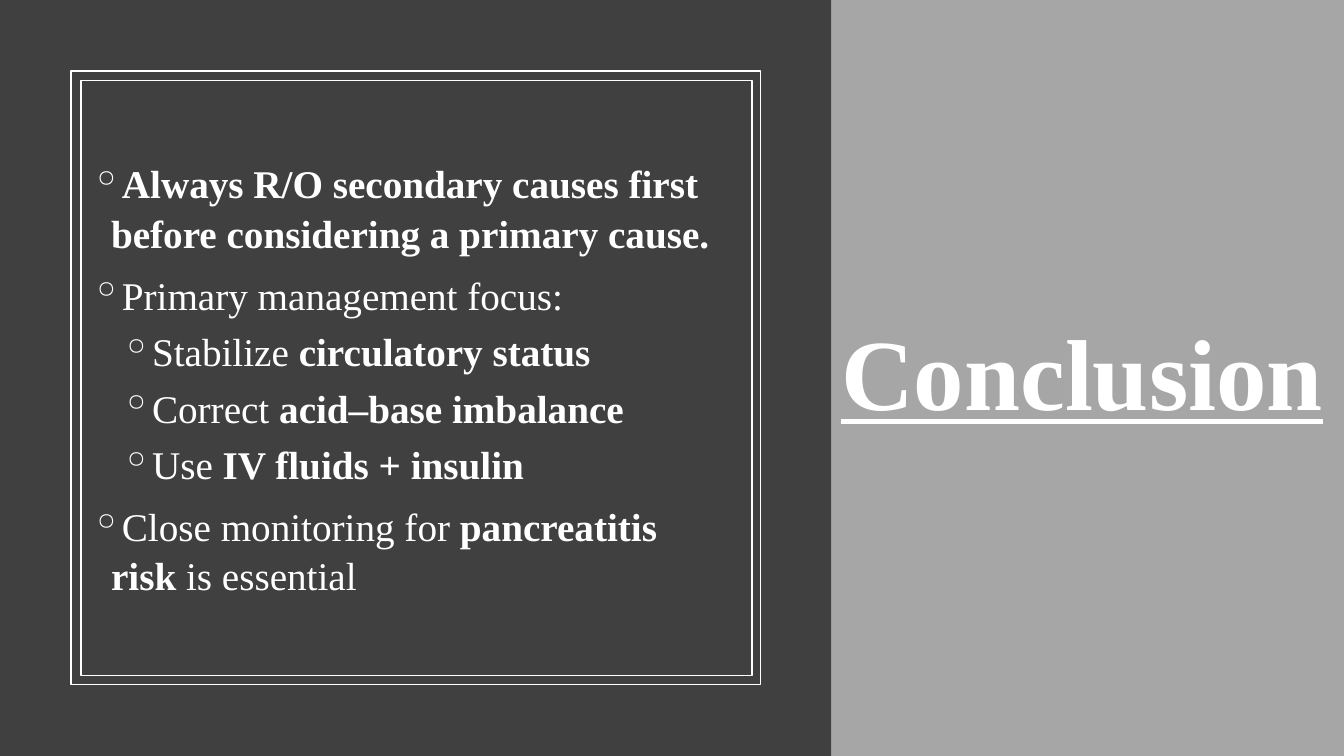
from lxml import etree
from pptx import Presentation
from pptx.dml.color import RGBColor
from pptx.enum import shapes, text
from pptx.oxml import ns
from pptx.util import Cm, Pt

# Content: (level, [(words, bold), ...])
TITLE = "Conclusion"
POINTS = [
    (0, [("Always R/O secondary causes first before considering a primary cause.", True)]),
    (0, [("Primary management focus:", False)]),
    (1, [("Stabilize ", False), ("circulatory status", True)]),
    (1, [("Correct ", False), ("acid–base imbalance", True)]),
    (1, [("Use ", False), ("IV fluids + insulin", True)]),
    (0, [("Close monitoring for ", False), ("pancreatitis risk", True), (" is essential", False)]),
]

# Style
FONT = "Times New Roman"
WHITE, GREY, CHARCOAL, BLACK = "FFFFFF", "A6A6A6", "404040", "000000"
LEFT_MARGIN = [0.51, 1.27]  # cm, by level
SPACE_BEFORE = [9, 5]  # points, by level
HANGING = 0.51

# Layout in cm: left, top, width, height
WIDTH, HEIGHT = 33.87, 19.05
PANEL_WIDTH = 20.95
OUTER_FRAME = (1.79, 1.79, 17.37, 15.46)
INNER_FRAME = (2.04, 2.03, 16.91, 15)
TITLE_BOX = (PANEL_WIDTH, 3.25, 13.39, 12.55)
BODY_BOX = (2.04, 2.69, 16.13, 13.67)


def colour(hex_text):
    return RGBColor.from_string(hex_text)


def add_rectangle(page, place, fill=None, line=None):
    box = page.shapes.add_shape(shapes.MSO_SHAPE.RECTANGLE, *map(Cm, place))
    box.shadow.inherit = False
    if fill:
        box.fill.solid()
        box.fill.fore_color.rgb = colour(fill)
    else:
        box.fill.background()
    if line:
        box.line.color.rgb = colour(line)
        box.line.width = Pt(1)
    else:
        box.line.fill.background()


def add_text(page, place):
    frame = page.shapes.add_textbox(*map(Cm, place)).text_frame
    frame.word_wrap = True
    frame.vertical_anchor = text.MSO_ANCHOR.MIDDLE
    return frame


def style_font(font, size, bold):
    font.name, font.size, font.bold = FONT, Pt(size), bold
    font.color.rgb = colour(WHITE)


def add_bullet(para, level):
    properties = para._p.get_or_add_pPr()
    properties.set("marL", str(Cm(LEFT_MARGIN[level])))
    properties.set("indent", str(-Cm(HANGING)))
    bullet_colour = etree.SubElement(properties, ns.qn("a:buClr"))
    etree.SubElement(bullet_colour, ns.qn("a:srgbClr"), val=WHITE)
    etree.SubElement(properties, ns.qn("a:buChar"), char="◦")


deck = Presentation()
deck.slide_width, deck.slide_height = Cm(WIDTH), Cm(HEIGHT)
page = deck.slides.add_slide(deck.slide_layouts[6])
page.background.fill.solid()
page.background.fill.fore_color.rgb = colour(BLACK)

# Grey backdrop and title
add_rectangle(page, (0, 0, WIDTH, HEIGHT), fill=GREY)
title = add_text(page, TITLE_BOX)
title.text = TITLE
title.paragraphs[0].line_spacing = 0.9
title_font = title.paragraphs[0].runs[0].font
style_font(title_font, 72, True)
title_font.underline = True

# Dark panel with double frame
add_rectangle(page, (0, 0, PANEL_WIDTH, HEIGHT), fill=CHARCOAL)
for frame_place in (OUTER_FRAME, INNER_FRAME):
    add_rectangle(page, frame_place, line=WHITE)

# Bulleted points
body = add_text(page, BODY_BOX)
for index, (level, spans) in enumerate(POINTS):
    para = body.add_paragraph() if index else body.paragraphs[0]
    add_bullet(para, level)
    para.level = level
    para.line_spacing = 1.05
    if index:
        para.space_before = Pt(SPACE_BEFORE[level])
    for words, bold in spans:
        span = para.add_run()
        span.text = words
        style_font(span.font, 28, bold)

deck.save("out.pptx")
